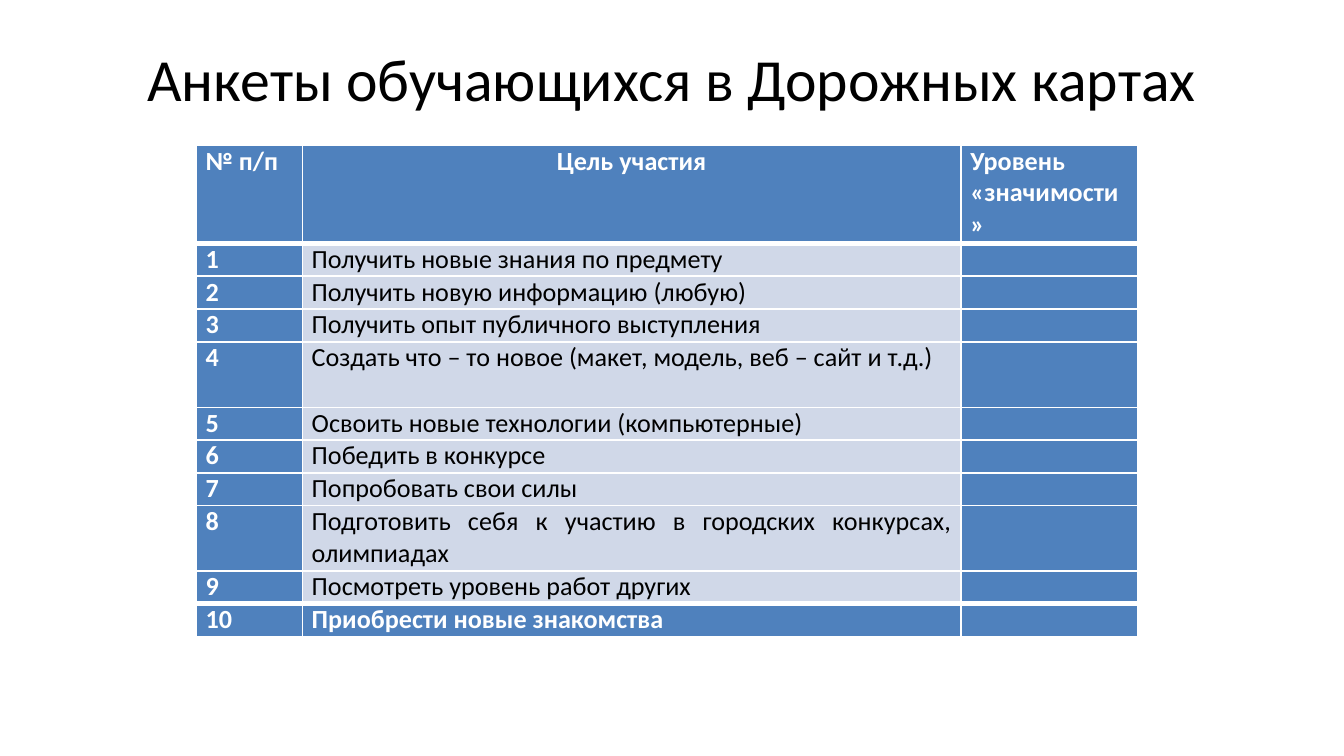
import pptx
import pptx.dml.color
import pptx.enum.text
import pptx.oxml
import pptx.oxml.ns
import pptx.util
from lxml import etree

Inches = pptx.util.Inches
Pt = pptx.util.Pt
ALIGN = pptx.enum.text.PP_ALIGN
ANCHOR = pptx.enum.text.MSO_ANCHOR

TITLE = "Анкеты обучающихся в Дорожных картах"
HEADERS = ["№ п/п", "Цель участия", "Уровень «значимости»"]
GOALS = [
    "Получить новые знания по предмету",
    "Получить новую информацию (любую)",
    "Получить опыт публичного выступления",
    "Создать что – то новое (макет, модель, веб – сайт и т.д.)",
    "Освоить новые технологии (компьютерные)",
    "Победить в конкурсе",
    "Попробовать свои силы",
    "Подготовить себя к участию в городских конкурсах, олимпиадах",
    "Посмотреть уровень работ других",
    "Приобрести новые знакомства",
]
ROWS = [HEADERS] + [[str(number), goal, ""] for number, goal in enumerate(GOALS, 1)]
LAST = len(ROWS) - 1
SLIDE_WIDTH = 10
SLIDE_HEIGHT = SLIDE_WIDTH * 9 / 16
COLUMN_WIDTHS = [0.79, 4.9, 1.32]
TABLE_HEIGHT = 3.66
ROW_LINES = [3, 1, 1, 1, 2, 1, 1, 1, 2, 1, 1]
BLUE, PALE, WHITE, BLACK = "4F81BD", "D0D8E8", "FFFFFF", "000000"
CELL_FORMAT = {
    "margin_left": Inches(0.07), "margin_right": Inches(0.07),
    "margin_top": 0, "margin_bottom": 0, "vertical_anchor": ANCHOR.TOP,
}


def color(value):
    """Turn a hex string into a colour."""
    return pptx.dml.color.RGBColor.from_string(value)


def apply(target, values):
    """Set each named attribute of the target."""
    for name, value in values.items():
        setattr(target, name, value)


def write(paragraph, text, size, ink, bold, alignment):
    """Put one formatted run of text in a paragraph."""
    paragraph.alignment = alignment
    if text:
        run = paragraph.add_run()
        run.text = text
        apply(run.font, {"name": "Calibri", "size": Pt(size), "bold": bold})
        run.font.color.rgb = color(ink)
    else:
        end = etree.SubElement(paragraph._p, pptx.oxml.ns.qn("a:endParaRPr"))
        end.set("sz", str(size * 100))


def add_borders(cell, widths):
    """Draw white borders of the given widths in points."""
    properties = cell._tc.get_or_add_tcPr()
    for side, width in widths.items():
        properties.append(pptx.oxml.parse_xml(
            f'<a:ln{side} {pptx.oxml.ns.nsdecls("a")} w="{Pt(width)}"><a:solidFill>'
            f'<a:srgbClr val="{WHITE}"/></a:solidFill></a:ln{side}>'))


def add_title(slide):
    """Place and fill the title placeholder."""
    title = slide.shapes.title
    apply(title, {"left": Inches(0.5), "top": Inches(0.23),
                  "width": Inches(9), "height": Inches(0.7)})
    apply(title.text_frame, {"vertical_anchor": ANCHOR.MIDDLE, "word_wrap": True})
    write(title.text_frame.paragraphs[0], TITLE, 32, BLACK, False, ALIGN.CENTER)


def add_goals_table(slide):
    """Build the table of goals."""
    table = slide.shapes.add_table(
        len(ROWS), len(HEADERS), Inches(1.46), Inches(1.08),
        Inches(sum(COLUMN_WIDTHS)), Inches(TABLE_HEIGHT)).table
    apply(table, {"first_row": False, "horz_banding": False})
    for column, width in zip(table.columns, COLUMN_WIDTHS):
        column.width = Inches(width)
    line_height = TABLE_HEIGHT / sum(ROW_LINES)
    for row, (texts, lines) in enumerate(zip(ROWS, ROW_LINES)):
        table.rows[row].height = Inches(lines * line_height)
        for column, text in enumerate(texts):
            cell = table.cell(row, column)
            plain = column == 1 and 0 < row < LAST
            apply(cell, CELL_FORMAT)
            add_borders(cell, {"L": 1, "R": 1, "T": 3 if row in (1, LAST) else 1,
                               "B": 3 if row in (0, LAST - 1) else 1})
            cell.fill.solid()
            cell.fill.fore_color.rgb = color(PALE if plain else BLUE)
            alignment = ALIGN.CENTER if (row, column) == (0, 1) else ALIGN.JUSTIFY
            write(cell.text_frame.paragraphs[0], text, 14,
                  BLACK if plain else WHITE, not plain, alignment)


def main():
    """Build and save the presentation."""
    presentation = pptx.Presentation()
    apply(presentation, {"slide_width": Inches(SLIDE_WIDTH),
                         "slide_height": Inches(SLIDE_HEIGHT)})
    slide = presentation.slides.add_slide(presentation.slide_layouts[5])
    add_title(slide)
    add_goals_table(slide)
    presentation.save("out.pptx")


if __name__ == "__main__":
    main()
